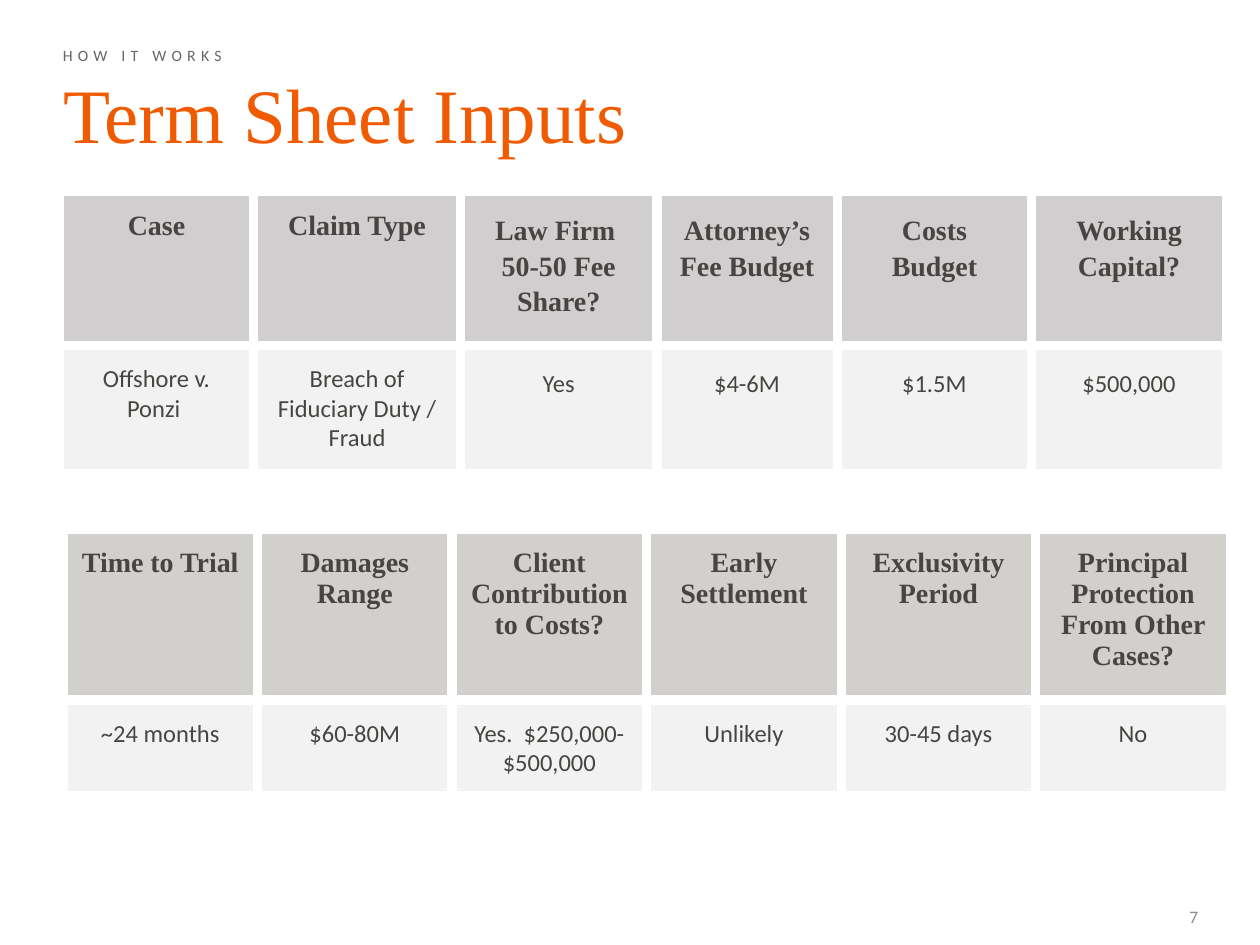
from dataclasses import dataclass

from lxml.etree import SubElement
from pptx import Presentation
from pptx.dml.color import RGBColor
from pptx.enum.text import MSO_ANCHOR, MSO_AUTO_SIZE, PP_ALIGN
from pptx.oxml.ns import qn
from pptx.util import Pt

COLORS = {
    "title": "F05A00",
    "kicker": "696762",
    "number": "8C8983",
    "ink": "464541",
    "warm_header": "D0CECE",
    "grey_header": "D1D0CD",
    "body": "F2F2F2",
    "border": "FFFFFF",
}
SERIF = "Times New Roman"
SANS = "Calibri"
CELL_INSET = 10.8
BORDER_WIDTH = 6
TIGHT = 0.99
LOOSE = 1.15


@dataclass(frozen=True)
class Style:
    font: str
    size: float
    color: str
    bold: bool = False


@dataclass(frozen=True)
class Column:
    header: str
    value: str
    width: float = 111.2
    spacing: float = TIGHT


@dataclass(frozen=True)
class Grid:
    left: float
    top: float
    row_heights: tuple[float, float]
    header_fill: str
    columns: tuple[Column, ...]


HEADER_STYLE = Style(SERIF, 16, "ink", bold=True)
VALUE_STYLE = Style(SANS, 14, "ink")

GRIDS = (
    Grid(33.84, 109.6, (56, 73.4), "warm_header", (
        Column("Case", "Offshore v. Ponzi "),
        Column("Claim Type", "Breach of Fiduciary Duty / Fraud", 118.1),
        Column("Law Firm \n50-50 Fee Share?", "Yes", 112.3, LOOSE),
        Column("Attorney’s Fee Budget", "$4-6M", 103, LOOSE),
        Column("Costs Budget", "$1.5M", spacing=LOOSE),
        Column("Working Capital?", "$500,000", spacing=LOOSE),
    )),
    Grid(36, 302.4, (70.6, 43.2), "grey_header", (
        Column("Time to Trial", "~24 months"),
        Column("Damages Range", "$60-80M"),
        Column("Client Contribution to Costs?", "Yes.  $250,000-$500,000"),
        Column("Early Settlement", "Unlikely"),
        Column("Exclusivity Period", "30-45 days"),
        Column("Principal Protection From Other Cases?", "No"),
    )),
)


def rgb(name: str) -> RGBColor:
    return RGBColor.from_string(COLORS[name])


def add_span(para, text: str, style: Style):
    span = para.add_run()
    span.text = text
    span.font.name = style.font
    span.font.size = Pt(style.size)
    span.font.bold = style.bold
    span.font.color.rgb = rgb(style.color)
    return span


def add_label(page, left: float, top: float, width: float, height: float,
              text: str, style: Style):
    box = page.shapes.add_textbox(Pt(left), Pt(top), Pt(width), Pt(height))
    box.text_frame.word_wrap = True
    return box, add_span(box.text_frame.paragraphs[0], text, style)


def add_borders(cell) -> None:
    properties = cell._tc.get_or_add_tcPr()
    for position, side in enumerate(("lnL", "lnR", "lnT", "lnB")):
        line = SubElement(properties, qn(f"a:{side}"), w=str(Pt(BORDER_WIDTH)))
        fill = SubElement(line, qn("a:solidFill"))
        SubElement(fill, qn("a:srgbClr"), val=COLORS["border"])
        # Borders come before the cell's fill
        properties.insert(position, line)


def fill_cell(cell, text: str, style: Style, fill: str, spacing: float) -> None:
    cell.margin_left = cell.margin_right = Pt(CELL_INSET)
    cell.margin_top = cell.margin_bottom = Pt(CELL_INSET)
    cell.vertical_anchor = MSO_ANCHOR.TOP
    cell.fill.solid()
    cell.fill.fore_color.rgb = rgb(fill)
    add_borders(cell)
    for index, line in enumerate(text.split("\n")):
        frame = cell.text_frame
        para = frame.add_paragraph() if index else frame.paragraphs[0]
        para.alignment = PP_ALIGN.CENTER
        para.line_spacing = spacing
        add_span(para, line, style)


def add_grid(page, grid: Grid) -> None:
    width = sum(column.width for column in grid.columns)
    table = page.shapes.add_table(
        2, len(grid.columns), Pt(grid.left), Pt(grid.top),
        Pt(width), Pt(sum(grid.row_heights))).table
    table.first_row = table.horz_banding = False
    for row, height in zip(table.rows, grid.row_heights):
        row.height = Pt(height)
    for index, column in enumerate(grid.columns):
        table.columns[index].width = Pt(column.width)
        fill_cell(table.cell(0, index), column.header, HEADER_STYLE,
                  grid.header_fill, column.spacing)
        fill_cell(table.cell(1, index), column.value, VALUE_STYLE,
                  "body", column.spacing)


def add_title(page, text: str) -> None:
    title = page.shapes.title
    title.left, title.top = Pt(28.8), Pt(40.3)
    title.width, title.height = Pt(620.6), Pt(54.7)
    frame = title.text_frame
    frame.auto_size = MSO_AUTO_SIZE.NONE
    frame.vertical_anchor = MSO_ANCHOR.TOP
    para = frame.paragraphs[0]
    para.alignment = PP_ALIGN.LEFT
    para.line_spacing = 0.9
    add_span(para, text, Style(SERIF, 44, "title"))


def main() -> None:
    deck = Presentation()
    deck.slide_width, deck.slide_height = Pt(720), Pt(540)
    page = deck.slides.add_slide(deck.slide_layouts[5])

    # Page number
    number, _ = add_label(page, 668.2, 514.1, 31, 19.4, "7",
                          Style(SANS, 10, "number"))
    number.text_frame.word_wrap = False
    number.text_frame.margin_left = Pt(11.5)

    # Heading
    _, kicker = add_label(page, 28.8, 22.3, 324, 18, "HOW IT WORKS",
                          Style(SANS, 9, "kicker"))
    kicker.font._element.set("spc", "300")
    add_title(page, "Term Sheet Inputs")

    # Term sheet tables
    for grid in GRIDS:
        add_grid(page, grid)

    deck.save("out.pptx")


if __name__ == "__main__":
    main()
